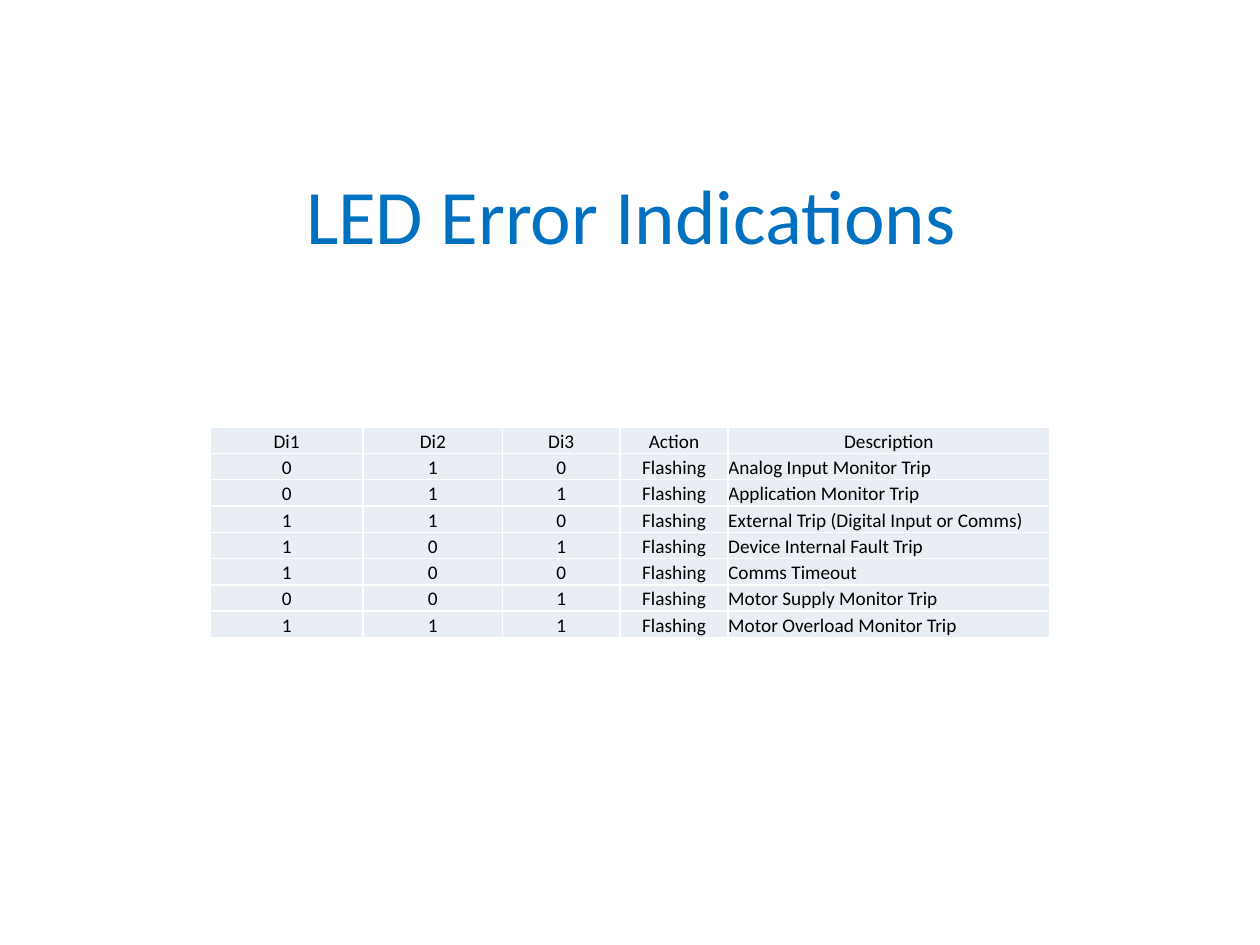
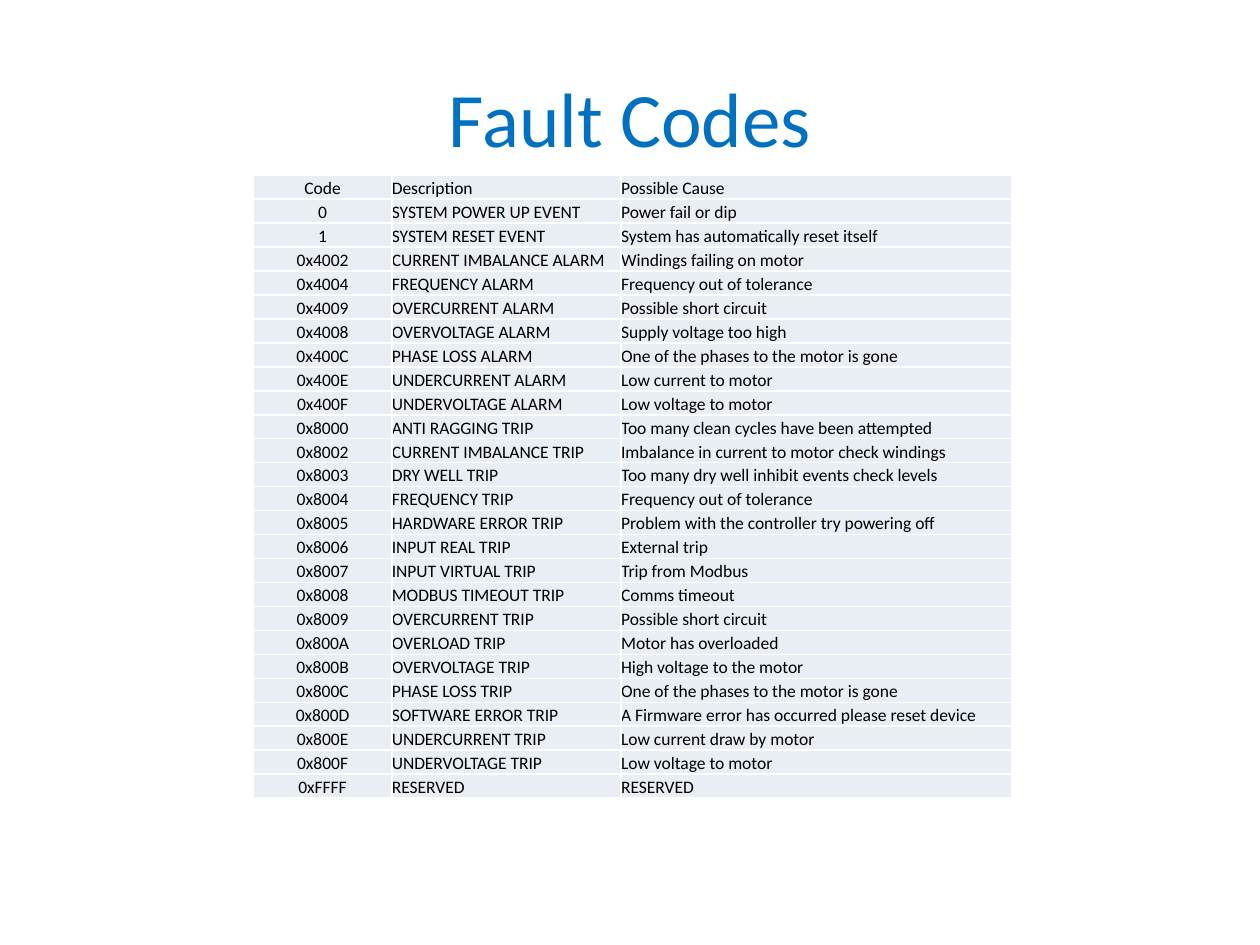
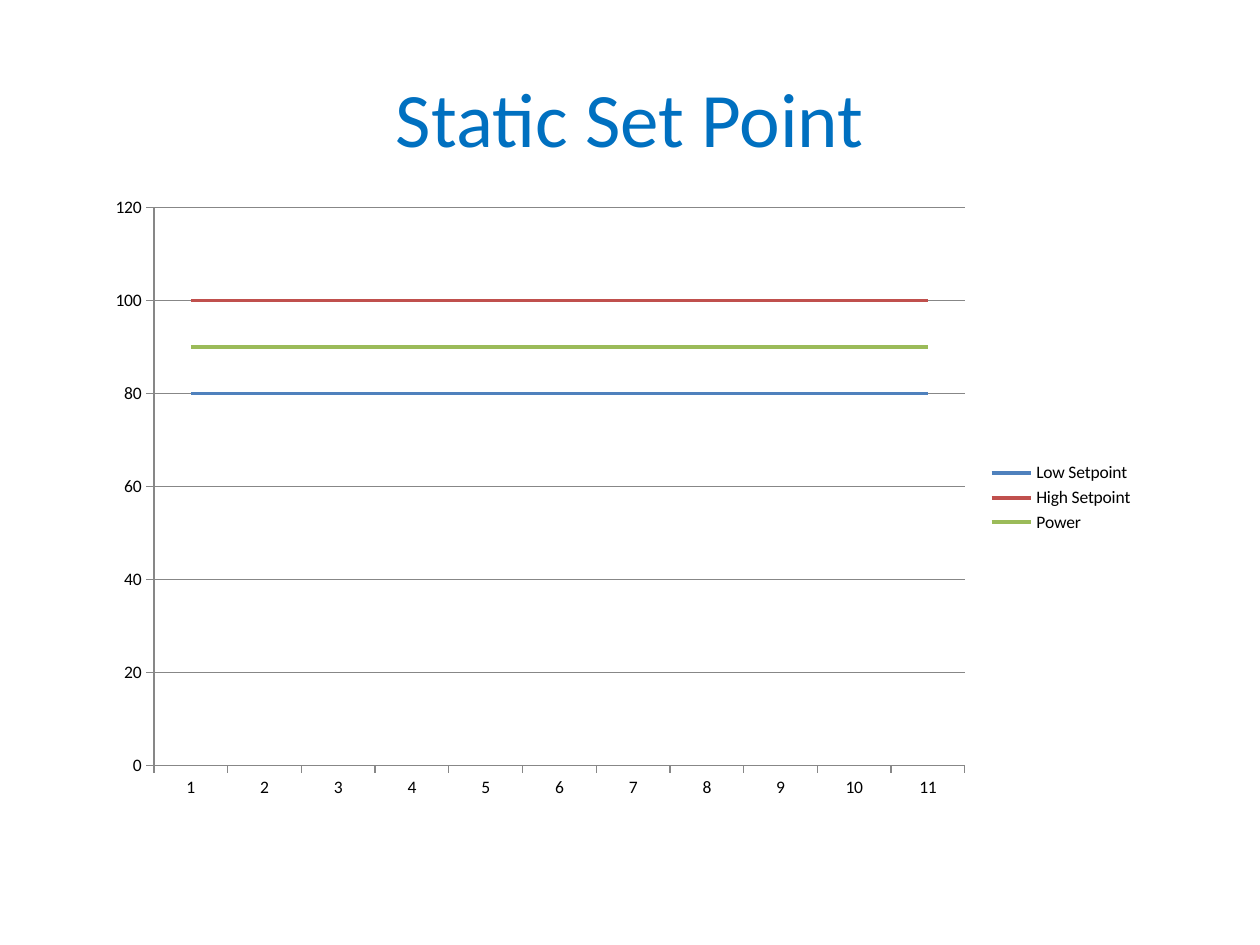
from dataclasses import dataclass

from lxml import etree
from pptx import Presentation
from pptx import util as u
from pptx.chart.data import CategoryChartData
from pptx.dml.color import RGBColor
from pptx.enum import chart as charts, text
from pptx.oxml.ns import qn

PX_PER_INCH = 100
EMU_PER_PX = 914400 // PX_PER_INCH


# Shared look
@dataclass(frozen=True)
class Theme:
    font: str = "Calibri"
    heading: str = "0070C0"
    ink: str = "000000"
    cell: str = "E9EDF4"
    border: str = "FFFFFF"
    axis: str = "878787"
    heading_size: int = 44
    led_size: int = 11
    small_size: int = 10
    border_width: float = 1
    axis_width: float = 0.75
    series_width: float = 2.25


THEME = Theme()
ALIGN = {"c": text.PP_ALIGN.CENTER, "l": text.PP_ALIGN.LEFT}


@dataclass(frozen=True)
class Box:
    left: int
    top: int
    width: int
    height: int

    def emu(self) -> tuple:
        return tuple(px(v) for v in (self.left, self.top, self.width, self.height))


@dataclass(frozen=True)
class Grid:
    box: Box
    columns: tuple
    header_align: str
    body_align: str
    size: int
    rows: tuple


@dataclass(frozen=True)
class Trace:
    name: str
    level: int
    color: str


# Content
HEADING_BOX = Box(50, 30, 900, 125)
LED_HEADING_BOX = Box(51, 107, 900, 125)

LED_TRIPS = (
    ("0", "1", "0", "Analog Input Monitor Trip"),
    ("0", "1", "1", "Application Monitor Trip"),
    ("1", "1", "0", "External Trip (Digital Input or Comms)"),
    ("1", "0", "1", "Device Internal Fault Trip"),
    ("1", "0", "0", "Comms Timeout"),
    ("0", "0", "1", "Motor Supply Monitor Trip"),
    ("1", "1", "1", "Motor Overload Monitor Trip"),
)
LED_GRID = Grid(
    Box(167, 339, 667, 167), (121, 111, 93, 86, 255), "ccccc", "ccccl",
    THEME.led_size,
    (("Di1", "Di2", "Di3", "Action", "Description"),
     *((*leds, "Flashing", trip) for *leds, trip in LED_TRIPS)),
)

FAULT_GRID = Grid(
    Box(201, 139, 602, 495), (110, 182, 310), "cll", "cll", THEME.small_size,
    (
        ("Code", "Description", "Possible Cause"),
        ("0", "SYSTEM POWER UP EVENT", "Power fail or dip"),
        ("1", "SYSTEM RESET EVENT", "System has automatically reset itself"),
        ("0x4002", "CURRENT IMBALANCE ALARM", "Windings failing on motor"),
        ("0x4004", "FREQUENCY ALARM", "Frequency out of tolerance"),
        ("0x4009", "OVERCURRENT ALARM", "Possible short circuit"),
        ("0x4008", "OVERVOLTAGE ALARM", "Supply voltage too high"),
        ("0x400C", "PHASE LOSS ALARM", "One of the phases to the motor is gone"),
        ("0x400E", "UNDERCURRENT ALARM", "Low current to motor"),
        ("0x400F", "UNDERVOLTAGE ALARM", "Low voltage to motor"),
        ("0x8000", "ANTI RAGGING TRIP", "Too many clean cycles have been attempted"),
        ("0x8002", "CURRENT IMBALANCE TRIP", "Imbalance in current to motor check windings"),
        ("0x8003", "DRY WELL TRIP", "Too many dry well inhibit events check levels"),
        ("0x8004", "FREQUENCY TRIP", "Frequency out of tolerance"),
        ("0x8005", "HARDWARE ERROR TRIP", "Problem with the controller try powering off"),
        ("0x8006", "INPUT REAL TRIP", "External trip"),
        ("0x8007", "INPUT VIRTUAL TRIP", "Trip from Modbus"),
        ("0x8008", "MODBUS TIMEOUT TRIP", "Comms timeout"),
        ("0x8009", "OVERCURRENT TRIP", "Possible short circuit"),
        ("0x800A", "OVERLOAD TRIP", "Motor has overloaded"),
        ("0x800B", "OVERVOLTAGE TRIP", "High voltage to the motor"),
        ("0x800C", "PHASE LOSS TRIP", "One of the phases to the motor is gone"),
        ("0x800D", "SOFTWARE ERROR TRIP", "A Firmware error has occurred please reset device"),
        ("0x800E", "UNDERCURRENT TRIP", "Low current draw by motor"),
        ("0x800F", "UNDERVOLTAGE TRIP", "Low voltage to motor"),
        ("0xFFFF", "RESERVED", "RESERVED"),
    ),
)

SETPOINT_BOX = Box(75, 147, 835, 496)
SAMPLES = [str(n) for n in range(1, 12)]
TRACES = (
    Trace("Low Setpoint", 80, "4F81BD"),
    Trace("High Setpoint", 100, "C0504D"),
    Trace("Power", 90, "9BBB59"),
)


# Helpers
def px(value: int) -> u.Emu:
    return u.Emu(value * EMU_PER_PX)


def style_font(font, *, size: int, color: str) -> None:
    font.name = THEME.font
    font.size = u.Pt(size)
    font.color.rgb = RGBColor.from_string(color)


def style_line(line, *, color: str, width: float) -> None:
    line.color.rgb = RGBColor.from_string(color)
    line.width = u.Pt(width)


def write(frame, words: str, *, size: int, color: str = THEME.ink, align: str = "l") -> None:
    paragraph = frame.paragraphs[0]
    paragraph.alignment = ALIGN[align]
    run = paragraph.add_run()
    run.text = words
    style_font(run.font, size=size, color=color)


def add_heading(slide, words: str, box: Box = HEADING_BOX) -> None:
    frame = slide.shapes.add_textbox(*box.emu()).text_frame
    frame.word_wrap = True
    frame.vertical_anchor = text.MSO_ANCHOR.MIDDLE
    write(frame, words, size=THEME.heading_size, color=THEME.heading, align="c")


def add_borders(cell) -> None:
    properties = cell._tc.get_or_add_tcPr()
    for side in ("lnL", "lnR", "lnT", "lnB"):
        edge = etree.SubElement(properties, qn(f"a:{side}"), w=str(u.Pt(THEME.border_width)))
        fill = etree.SubElement(edge, qn("a:solidFill"))
        etree.SubElement(fill, qn("a:srgbClr"), val=THEME.border)


def add_grid(slide, grid: Grid) -> None:
    count = len(grid.rows)
    table = slide.shapes.add_table(count, len(grid.columns), *grid.box.emu()).table
    table.first_row = table.horz_banding = False
    for column, width in zip(table.columns, grid.columns):
        column.width = px(width)
    for index, (row, entries) in enumerate(zip(table.rows, grid.rows)):
        row.height = u.Emu(px(grid.box.height) // count)
        aligns = grid.body_align if index else grid.header_align
        for cell, entry, align in zip(row.cells, entries, aligns):
            cell.margin_left = cell.margin_right = cell.margin_top = cell.margin_bottom = 0
            cell.vertical_anchor = text.MSO_ANCHOR.BOTTOM
            add_borders(cell)
            cell.fill.solid()
            cell.fill.fore_color.rgb = RGBColor.from_string(THEME.cell)
            write(cell.text_frame, entry, size=grid.size, align=align)


def add_setpoint_chart(slide) -> None:
    data = CategoryChartData()
    data.categories = SAMPLES
    for trace in TRACES:
        data.add_series(trace.name, [trace.level] * len(SAMPLES))
    chart = slide.shapes.add_chart(
        charts.XL_CHART_TYPE.LINE, *SETPOINT_BOX.emu(), data).chart
    style_font(chart.font, size=THEME.small_size, color=THEME.ink)
    chart.has_title = False
    chart.has_legend = True
    chart.legend.position = charts.XL_LEGEND_POSITION.RIGHT
    chart.legend.include_in_layout = False

    levels = chart.value_axis
    levels.minimum_scale, levels.maximum_scale, levels.major_unit = 0, 120, 20
    levels.has_major_gridlines = True
    for axis in (levels, chart.category_axis):
        axis.major_tick_mark = charts.XL_TICK_MARK.OUTSIDE
        axis.minor_tick_mark = charts.XL_TICK_MARK.NONE
    for line in (levels.format.line, chart.category_axis.format.line,
                 levels.major_gridlines.format.line):
        style_line(line, color=THEME.axis, width=THEME.axis_width)

    plot = chart.plots[0]
    plot.vary_by_categories = False
    for series, trace in zip(plot.series, TRACES):
        series.smooth = False
        series.marker.style = charts.XL_MARKER_STYLE.NONE
        style_line(series.format.line, color=trace.color, width=THEME.series_width)


# Slides
def main() -> None:
    deck = Presentation()
    deck.slide_width, deck.slide_height = px(1000), px(750)
    blank = deck.slide_layouts[6]

    led_slide = deck.slides.add_slide(blank)
    add_heading(led_slide, "LED Error Indications", LED_HEADING_BOX)
    add_grid(led_slide, LED_GRID)

    fault_slide = deck.slides.add_slide(blank)
    add_heading(fault_slide, "Fault Codes")
    add_grid(fault_slide, FAULT_GRID)

    setpoint_slide = deck.slides.add_slide(blank)
    add_heading(setpoint_slide, "Static Set Point")
    add_setpoint_chart(setpoint_slide)

    deck.save("out.pptx")


if __name__ == "__main__":
    main()
